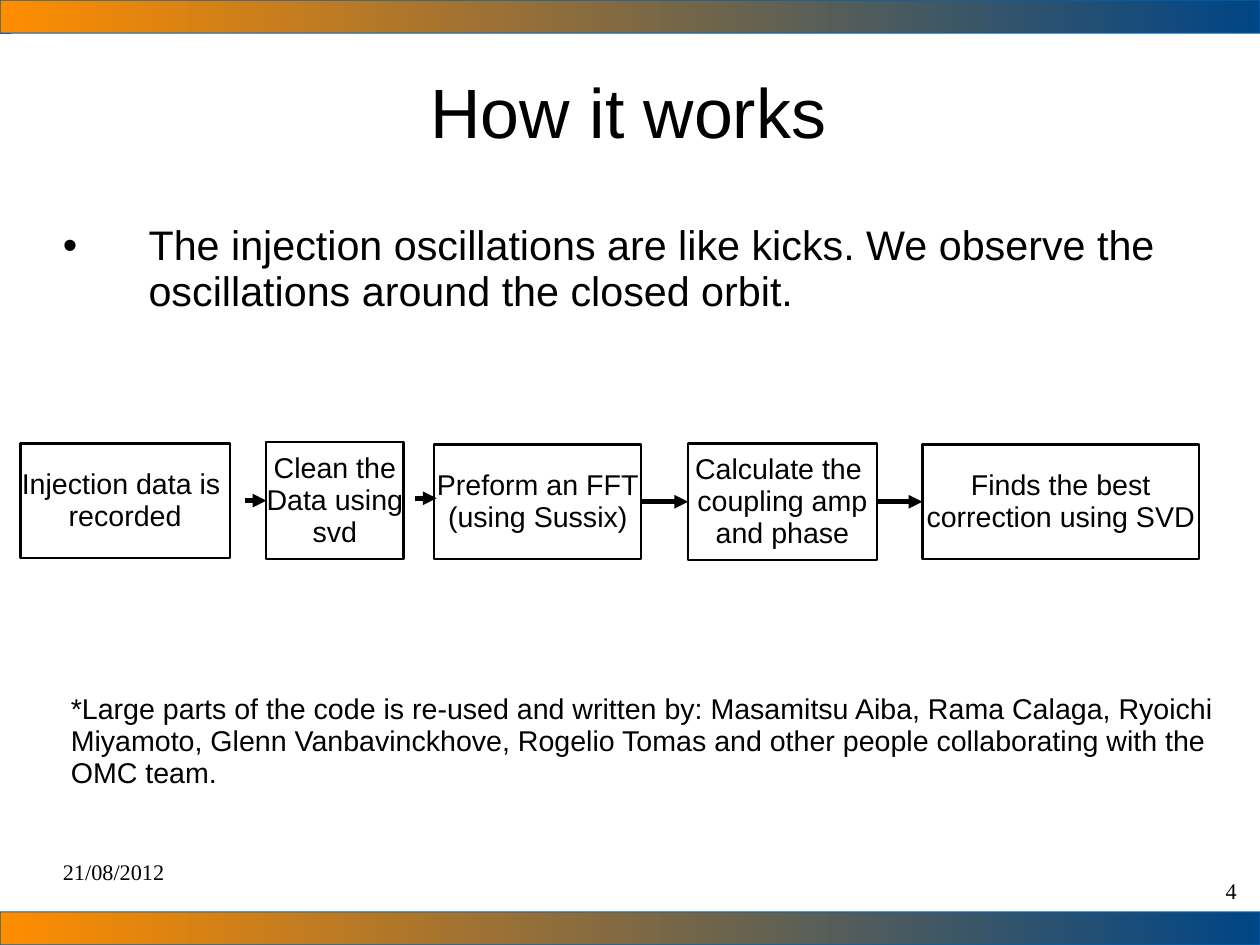
import pptx
import pptx.dml.color
import pptx.enum.shapes
import pptx.enum.text
import pptx.oxml.ns
import pptx.util
from lxml import etree
from pptx.util import Inches

BLACK = pptx.dml.color.RGBColor(0x00, 0x00, 0x00)
ORANGE = pptx.dml.color.RGBColor(0xFF, 0x8D, 0x00)
NAVY = pptx.dml.color.RGBColor(0x00, 0x45, 0x86)
BLUE = pptx.dml.color.RGBColor(0x00, 0x62, 0xB1)
CM_PER_INCH = 2.54
SLIDE_W, SLIDE_H, BAND_H = 28 / CM_PER_INCH, 21 / CM_PER_INCH, 0.29
SHAPE = pptx.enum.shapes.MSO_SHAPE
ALIGN = pptx.enum.text.PP_ALIGN
ANCHOR = pptx.enum.text.MSO_ANCHOR

STEPS = [
    (0.18, 3.88, 1.83, 1, ["Injection data is ", "recorded"]),
    (2.33, 3.87, 1.2, 1.02, ["Clean the", "Data using", "svd"]),
    (3.8, 3.89, 1.81, 1, ["Preform an FFT", "(using Sussix)"]),
    (6.02, 3.88, 1.65, 1.02, ["Calculate the ", "coupling amp", "and phase"]),
    (8.07, 3.89, 2.42, 1, ["Finds the best", "correction using SVD"]),
]
ARROWS = [(2.14, 2.33, 4.38), (3.63, 3.82, 4.36), (5.62, 6.02, 4.39), (7.67, 8.07, 4.39)]
INTRO = (
    "The injection oscillations are like kicks. We observe the oscillations "
    "around the closed orbit."
)
CREDITS = (
    "*Large parts of the code is re-used and written by: Masamitsu Aiba, Rama Calaga, "
    "Ryoichi Miyamoto, Glenn Vanbavinckhove, Rogelio Tomas and other people "
    "collaborating with the OMC team."
)


def set_margins(tf, x, y):
    """Set the side and the top and bottom insets of a text frame."""
    tf.margin_left = tf.margin_right = Inches(x)
    tf.margin_top = tf.margin_bottom = Inches(y)


def add_line(p, text, size, font="Arial", align=ALIGN.LEFT):
    """Fill a paragraph with one black run."""
    p.alignment = align
    p.line_spacing = 0.93
    r = p.add_run()
    r.text = text
    r.font.size = pptx.util.Pt(size)
    r.font.name = font
    r.font.color.rgb = BLACK


def add_bullet(p, indent):
    """Give a paragraph a round bullet with a hanging indent in inches."""
    pPr = p._p.get_or_add_pPr()
    pPr.set("marL", str(Inches(indent)))
    pPr.set("indent", str(-Inches(indent)))
    etree.SubElement(pPr, pptx.oxml.ns.qn("a:buFont")).set("typeface", "Arial")
    etree.SubElement(pPr, pptx.oxml.ns.qn("a:buChar")).set("char", "•")


def add_band(s, top):
    """Add a gradient band across the slide."""
    sp = s.shapes.add_shape(
        SHAPE.ROUNDED_RECTANGLE, 0, Inches(top), Inches(SLIDE_W), Inches(BAND_H))
    sp.shadow.inherit = False
    sp.adjustments[0] = 0.01
    sp.fill.gradient()
    sp.fill.gradient_angle = 0
    for stop, position, color in zip(sp.fill.gradient_stops, (0, 1), (ORANGE, NAVY)):
        stop.position = position
        stop.color.rgb = color
    sp.line.color.rgb = BLUE
    sp.line.width = pptx.util.Pt(0.75)


def add_title(s, text):
    """Place and fill the title placeholder."""
    sp = s.shapes.title
    sp.left, sp.top, sp.width, sp.height = Inches(0.55), Inches(0.38), Inches(9.9), Inches(1.26)
    tf = sp.text_frame
    tf.auto_size = pptx.enum.text.MSO_AUTO_SIZE.NONE
    tf.vertical_anchor = ANCHOR.MIDDLE
    set_margins(tf, 0, 0)
    add_line(tf.paragraphs[0], text, 44, align=ALIGN.CENTER)


def add_text(s, left, top, width, height, text, size, font="Arial", align=ALIGN.LEFT):
    """Add a wrapped text box and return its paragraph."""
    tf = s.shapes.add_textbox(Inches(left), Inches(top), Inches(width), Inches(height)).text_frame
    tf.word_wrap = True
    set_margins(tf, 0, 0)
    p = tf.paragraphs[0]
    add_line(p, text, size, font, align)
    return p


def add_step(s, left, top, width, height, lines):
    """Add an outlined process box with centred lines."""
    sp = s.shapes.add_shape(
        SHAPE.FLOWCHART_PROCESS, Inches(left), Inches(top), Inches(width), Inches(height))
    sp.shadow.inherit = False
    sp.fill.background()
    sp.line.color.rgb = BLACK
    sp.line.width = pptx.util.Pt(1.45)
    tf = sp.text_frame
    tf.word_wrap = False
    tf.vertical_anchor = ANCHOR.MIDDLE
    set_margins(tf, 0.11, 0.06)
    for i, line in enumerate(lines):
        p = tf.add_paragraph() if i else tf.paragraphs[0]
        add_line(p, line, 18, align=ALIGN.CENTER)


def add_arrow(s, start, end, y):
    """Add a level arrow between two steps."""
    c = s.shapes.add_connector(
        pptx.enum.shapes.MSO_CONNECTOR.ELBOW, Inches(start), Inches(y), Inches(end), Inches(y))
    c.line.color.rgb = BLACK
    c.line.width = pptx.util.Pt(2.89)
    ln = c.get_or_add_ln()
    etree.SubElement(ln, pptx.oxml.ns.qn("a:tailEnd")).set("type", "triangle")
    etree.SubElement(c._element.spPr, pptx.oxml.ns.qn("a:effectLst"))


def main():
    """Build and save the slide."""
    prs = pptx.Presentation()
    prs.slide_width, prs.slide_height = Inches(SLIDE_W), Inches(SLIDE_H)
    s = prs.slides.add_slide(prs.slide_layouts.get_by_name("Title Only"))
    for top in (0, SLIDE_H - BAND_H):
        add_band(s, top)
    add_text(s, 0.55, 7.53, 2.55, 0.55, "21/08/2012", 14, "Times New Roman")
    add_text(s, 8.27, 7.7, 2.55, 0.55, "4", 14, "Times New Roman", ALIGN.RIGHT)
    add_title(s, "How it works")
    intro = add_text(s, 0.55, 1.96, 9.9, 1, INTRO, 26)
    add_bullet(intro, 0.75)
    for step in STEPS:
        add_step(s, *step)
    for arrow in ARROWS:
        add_arrow(s, *arrow)
    add_text(s, 0.62, 6.07, 10.4, 0.87, CREDITS, 18)
    prs.save("out.pptx")


if __name__ == "__main__":
    main()
